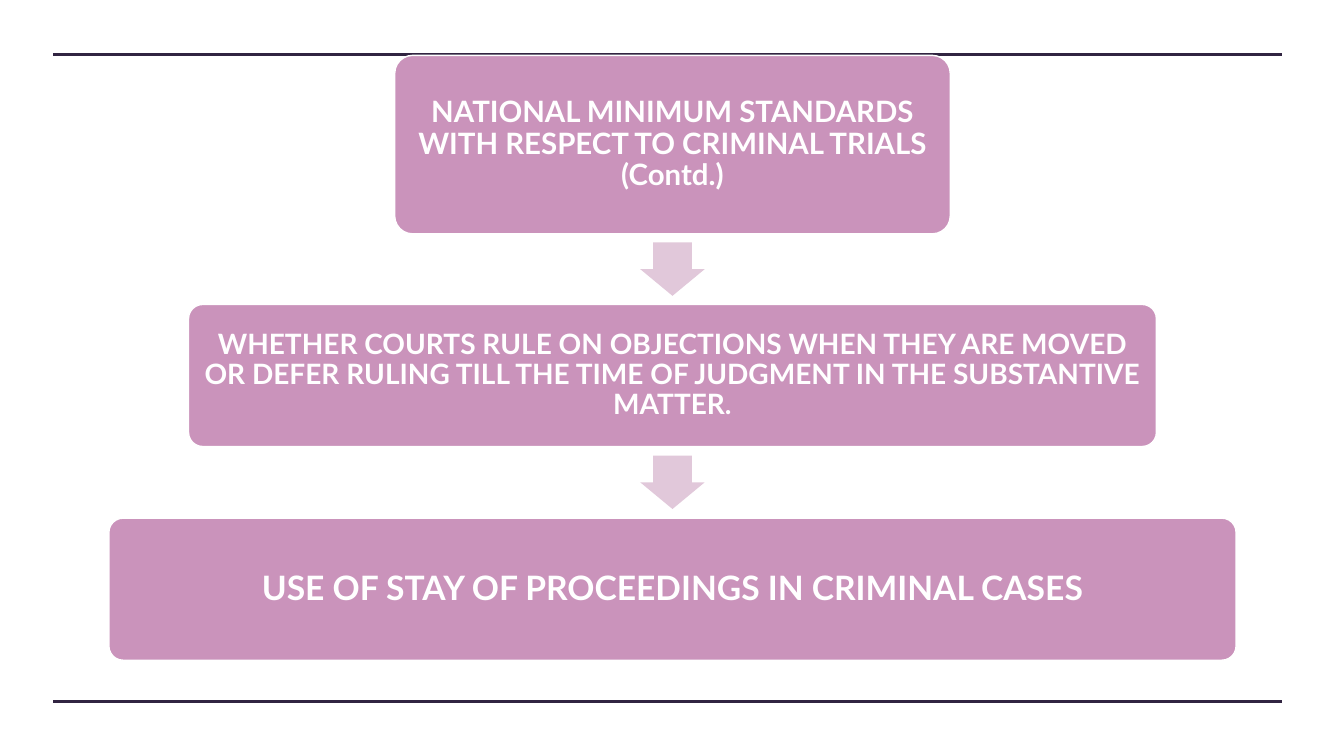
from itertools import pairwise

from lxml.etree import SubElement
from pptx import Presentation
from pptx.dml.color import RGBColor
from pptx.enum.shapes import MSO_CONNECTOR, MSO_SHAPE
from pptx.enum.text import MSO_ANCHOR, PP_ALIGN
from pptx.oxml.ns import qn
from pptx.util import Inches, Pt

CENTER = 6.67
# Each step: top, width, height, inset, text size, text
STEPS = [
    (0.55, 5.51, 1.77, 0.09, 21,
     "NATIONAL MINIMUM STANDARDS WITH RESPECT TO CRIMINAL TRIALS (Contd.)"),
    (3.02, 9.6, 1.41, 0.08, 20,
     "WHETHER COURTS RULE ON OBJECTIONS WHEN THEY ARE MOVED OR DEFER RULING "
     "TILL THE TIME OF JUDGMENT IN THE SUBSTANTIVE MATTER."),
    (5.14, 11.18, 1.41, 0.1, 24,
     "USE OF STAY OF PROCEEDINGS IN CRIMINAL CASES"),
]


def paint(color, value):
    color.rgb = RGBColor.from_string(value)


def add_rule(slide, left, top, width):
    """Horizontal rule that frames the slide."""
    rule = slide.shapes.add_connector(
        MSO_CONNECTOR.STRAIGHT, Inches(left), Inches(top),
        Inches(left + width), Inches(top))
    paint(rule.line.color, "312441")
    rule.line.width = Pt(2.25)
    SubElement(rule._element.spPr, qn("a:effectLst"))


def add_block(slide, kind, left, top, width, height, fill):
    """Filled preset shape without a shadow."""
    block = slide.shapes.add_shape(
        kind, Inches(left), Inches(top), Inches(width), Inches(height))
    block.shadow.inherit = False
    block.fill.solid()
    paint(block.fill.fore_color, fill)
    return block


def add_step(slide, left, top, width, height, inset, size, text):
    """Rounded box with its centred text."""
    box = add_block(slide, MSO_SHAPE.ROUNDED_RECTANGLE,
                    left, top, width, height, "CA93BB")
    box.adjustments[0] = 0.1
    paint(box.line.color, "FFFFFF")
    box.line.width = Pt(1)

    frame = box.text_frame
    frame.word_wrap = True
    frame.vertical_anchor = MSO_ANCHOR.MIDDLE
    frame.margin_left = frame.margin_right = Inches(inset)
    frame.margin_top = frame.margin_bottom = Inches(inset)
    frame.text = text
    para = frame.paragraphs[0]
    para.alignment = PP_ALIGN.CENTER
    para.line_spacing = 0.9
    font = para.runs[0].font
    font.name, font.size, font.bold = "Lato", Pt(size), True
    paint(font.color, "FFFFFF")


def add_arrow(slide, left, top, width, height):
    """Down arrow between two steps."""
    arrow = add_block(slide, MSO_SHAPE.DOWN_ARROW,
                      left, top, width, height, "E1C8DA")
    arrow.adjustments[0] = 0.6
    arrow.adjustments[1] = 0.5
    arrow.line.fill.background()


def add_flow(slide, center, steps):
    """Column of steps, with an arrow in the middle of each gap."""
    for top, width, height, *rest in steps:
        add_step(slide, center - width / 2, top, width, height, *rest)
    wide, tall = 0.64, 0.53
    for upper, lower in pairwise(steps):
        middle = (upper[0] + upper[2] + lower[0]) / 2
        add_arrow(slide, center - wide / 2, middle - tall / 2, wide, tall)


def main():
    deck = Presentation()
    deck.slide_width, deck.slide_height = Inches(13.33), Inches(7.5)
    slide = deck.slides.add_slide(deck.slide_layouts[6])
    # Frame rules
    for top in (0.54, 6.96):
        add_rule(slide, 0.53, top, 12.19)
    # Flow of steps
    add_flow(slide, CENTER, STEPS)
    deck.save("out.pptx")


if __name__ == "__main__":
    main()
